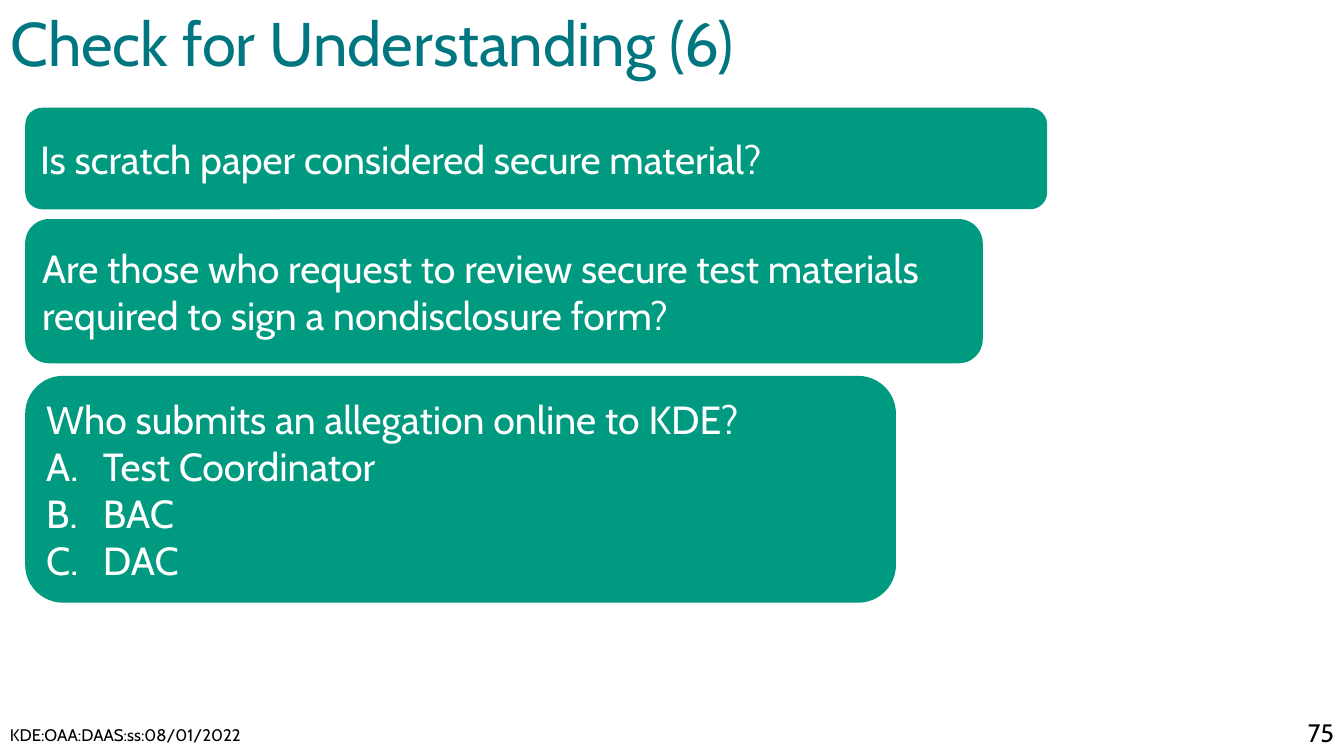
from lxml.etree import SubElement
from pptx import Presentation
from pptx.dml.color import RGBColor
from pptx.enum.shapes import MSO_SHAPE
from pptx.enum.text import MSO_ANCHOR, MSO_AUTO_SIZE, PP_ALIGN
from pptx.oxml.ns import qn
from pptx.util import Pt

TEAL = RGBColor(0x00, 0x77, 0x80)
GREEN = RGBColor(0x00, 0x9A, 0x80)
WHITE = RGBColor(0xFF, 0xFF, 0xFF)
BLACK = RGBColor(0x00, 0x00, 0x00)
FONT = "Cabin"
CARD_LEFT = 18
ANSWER_INDENT = 40.5

# Top, width, height, question, answers
QUESTIONS = [
    (77, 730, 72.5, "Is scratch paper considered secure material?", []),
    (156.5, 684, 103, "Are those who request to review secure test materials "
     "required to sign a nondisclosure form?", []),
    (268.5, 622, 162, "Who submits an allegation online to KDE?",
     ["Test Coordinator", "BAC", "DAC"]),
]


def format_paragraph(paragraph, size, color, align=PP_ALIGN.LEFT):
    paragraph.alignment = align
    for run in paragraph.runs:
        run.font.name = FONT
        run.font.size = Pt(size)
        run.font.color.rgb = color


def letter_answer(paragraph):
    properties = paragraph._p.get_or_add_pPr()
    properties.set("marL", str(Pt(ANSWER_INDENT)))
    properties.set("indent", str(-Pt(ANSWER_INDENT)))
    SubElement(properties, qn("a:buFont"), typeface=FONT)
    SubElement(properties, qn("a:buAutoNum"), type="alphaUcPeriod")


def add_title(slide, text):
    title = slide.shapes.title
    title.left, title.top, title.width, title.height = Pt(0), Pt(-3), Pt(677), Pt(73)
    frame = title.text_frame
    frame.text = text
    frame.vertical_anchor = MSO_ANCHOR.MIDDLE
    frame.auto_size = MSO_AUTO_SIZE.NONE
    heading = frame.paragraphs[0]
    heading.line_spacing = 0.9
    format_paragraph(heading, 44, TEAL)


def add_question(slide, top, width, height, question, answers):
    card = slide.shapes.add_shape(MSO_SHAPE.ROUNDED_RECTANGLE, Pt(CARD_LEFT),
                                  Pt(top), Pt(width), Pt(height))
    card.shadow.inherit = False
    card.fill.solid()
    card.fill.fore_color.rgb = GREEN
    card.line.fill.background()
    frame = card.text_frame
    frame.word_wrap = True
    frame.vertical_anchor = MSO_ANCHOR.MIDDLE
    frame.text = "\n".join([question, *answers])
    for answer in frame.paragraphs[1:]:
        letter_answer(answer)
    for paragraph in frame.paragraphs:
        format_paragraph(paragraph, 28, WHITE)


def add_footer(slide, left, top, width, height, text, size, align):
    footer = slide.shapes.add_textbox(Pt(left), Pt(top), Pt(width), Pt(height))
    frame = footer.text_frame
    frame.word_wrap = True
    frame.vertical_anchor = MSO_ANCHOR.MIDDLE
    frame.text = text
    format_paragraph(frame.paragraphs[0], size, BLACK, align)


def main():
    deck = Presentation()
    deck.slide_width, deck.slide_height = Pt(960), Pt(540)
    slide = deck.slides.add_slide(deck.slide_layouts.get_by_name("Title Only"))

    # Heading
    add_title(slide, "Check for Understanding (6)")

    # Question cards
    for question in QUESTIONS:
        add_question(slide, *question)

    # Document code and page number
    add_footer(slide, 0, 511, 184, 27.5, "KDE:OAA:DAAS:ss:08/01/2022", 12, PP_ALIGN.LEFT)
    add_footer(slide, 912, 509, 48, 29, "75", 18, PP_ALIGN.RIGHT)

    deck.save("out.pptx")


if __name__ == "__main__":
    main()
